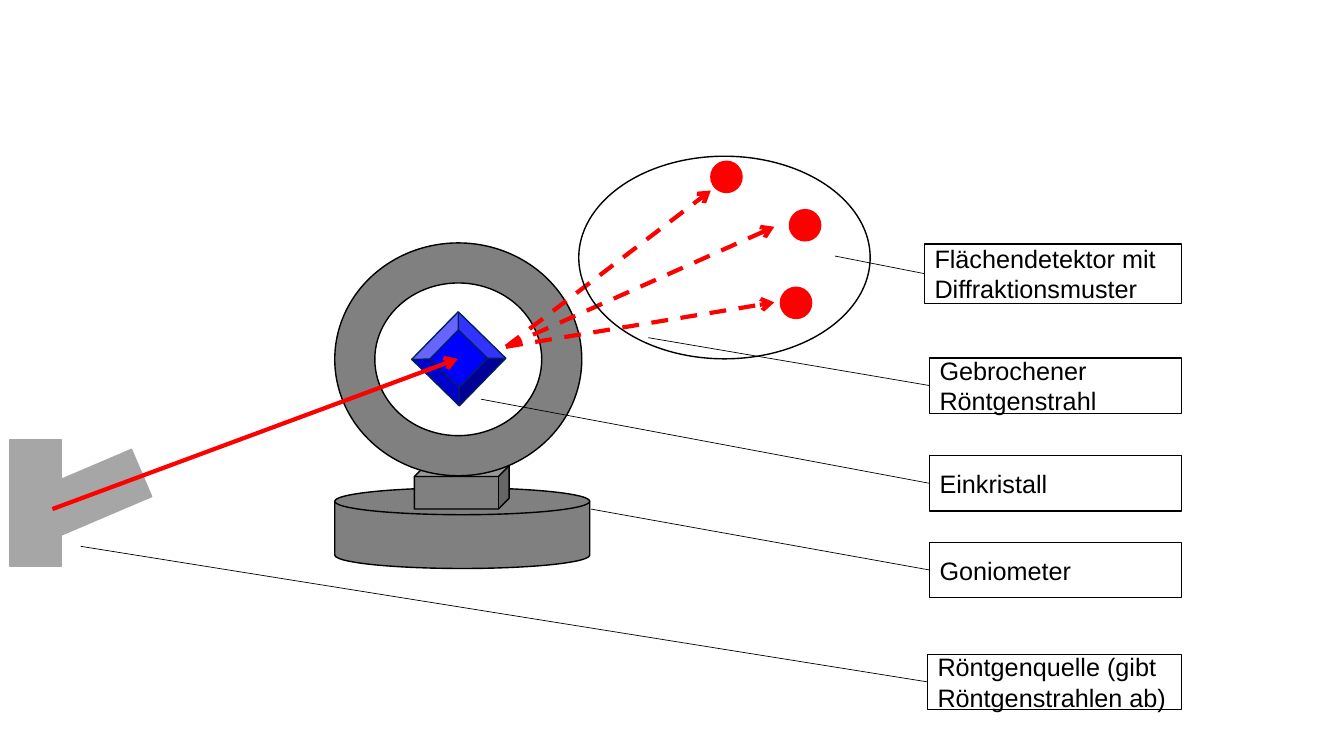
from lxml import etree
from pptx import Presentation
from pptx.dml import color
from pptx.enum import dml, shapes, text
from pptx.oxml import ns
from pptx.util import Inches, Pt

PRESET = shapes.MSO_SHAPE
BLACK, GREY, LIGHT_GREY = "000000", "808080", "A6A6A6"
RED, BLUE, NAVY, WHITE = "FF0000", "0000FF", "002060", "FFFFFF"


def paint(colour_format, hex_colour):
    colour_format.rgb = color.RGBColor.from_string(hex_colour)


def add_part(slide, preset, box, fill, line=BLACK, rotation=0, adjust=None):
    part = slide.shapes.add_shape(preset, *map(Inches, box))
    part.shadow.inherit = False
    part.rotation = rotation
    if adjust is not None:
        part.adjustments[0] = adjust
    if fill:
        part.fill.solid()
        paint(part.fill.fore_color, fill)
    else:
        part.fill.background()
    paint(part.line.color, line)
    part.line.width = Pt(1)
    return part


def add_line(slide, start, end, colour, width):
    line = slide.shapes.add_connector(
        shapes.MSO_CONNECTOR.STRAIGHT, *map(Inches, (*start, *end)))
    paint(line.line.color, colour)
    line.line.width = Pt(width)
    etree.SubElement(line._element.spPr, ns.qn("a:effectLst"))
    return line


def add_beam(slide, start, end, dashed=False):
    beam = add_line(slide, start, end, RED, 3)
    if dashed:
        beam.line.dash_style = dml.MSO_LINE.DASH
    etree.SubElement(beam.line._get_or_add_ln(), ns.qn("a:tailEnd"), type="arrow")


def add_xray_source(slide, left, top):
    add_part(slide, PRESET.RECTANGLE, (left, top, 0.51, 1.26),
             LIGHT_GREY, LIGHT_GREY)
    add_part(slide, PRESET.RECTANGLE, (left + 0.47, top - 0.05, 0.51, 1.26),
             LIGHT_GREY, LIGHT_GREY, rotation=66.9)


def add_goniometer(slide, left, top):
    add_part(slide, PRESET.FLOWCHART_MAGNETIC_DISK,
             (left, top + 2.43, 2.53, 0.8), GREY)
    add_part(slide, PRESET.CUBE, (left + 0.79, top + 2.21, 0.94, 0.43), GREY)
    add_part(slide, PRESET.DONUT, (left, top, 2.45, 2.31), GREY, adjust=0.172)
    add_part(slide, PRESET.BEVEL, (left + 0.9, top + 0.82, 0.66, 0.66),
             BLUE, NAVY, rotation=44.3, adjust=0.193)


def add_detector(slide, left, top, width, height):
    for dx, dy in ((1.31, 0.05), (2.09, 0.53), (2.0, 1.3)):
        add_part(slide, PRESET.OVAL, (left + dx, top + dy, 0.31, 0.31), RED, RED)
    add_part(slide, PRESET.OVAL, (left, top, width, height), None)


def add_label(slide, wording, box, target, fill=None):
    label = add_part(slide, PRESET.RECTANGLE, box, fill)
    frame = label.text_frame
    frame.text = wording
    frame.word_wrap = True
    frame.vertical_anchor = text.MSO_ANCHOR.MIDDLE
    paragraph = frame.paragraphs[0]
    paragraph.alignment = text.PP_ALIGN.LEFT
    font = paragraph.runs[0].font
    font.name, font.size = "Arial", Pt(18)
    paint(font.color, BLACK)
    left, top, _, height = box
    leader = add_line(slide, (left, top + height / 2), target, BLACK, 0.5)
    leader.begin_connect(label, 1)


def add_labels(slide, right):
    for wording, top, width, height, target, fill in (
        ("Flächendetektor mit Diffraktionsmuster", 2.42, 2.55, 0.59, (8.28, 2.54), WHITE),
        ("Gebrochener Röntgenstrahl", 3.55, 2.5, 0.55, (6.43, 3.35), None),
        ("Einkristall", 4.52, 2.5, 0.55, (4.77, 3.96), None),
        ("Goniometer", 5.38, 2.5, 0.55, (5.86, 5.05), None),
        ("Röntgenquelle (gibt Röntgenstrahlen ab)", 6.49, 2.52, 0.55, (0.8, 5.42), None),
    ):
        add_label(slide, wording, (right - width, top, width, height), target, fill)


def main():
    deck = Presentation()
    deck.slide_width, deck.slide_height = Inches(13.33), Inches(7.5)
    slide = deck.slides.add_slide(deck.slide_layouts[6])
    add_xray_source(slide, 0.1, 4.36)
    add_goniometer(slide, 3.32, 2.41)
    add_beam(slide, (0.52, 5.05), (4.54, 3.56))
    for spot in ((7.68, 2.25), (7.68, 3), (7.05, 1.89)):
        add_beam(slide, (5.02, 3.44), spot, dashed=True)
    add_detector(slide, 5.74, 1.55, 2.89, 2.01)
    add_labels(slide, 11.72)
    deck.save("out.pptx")


if __name__ == "__main__":
    main()
